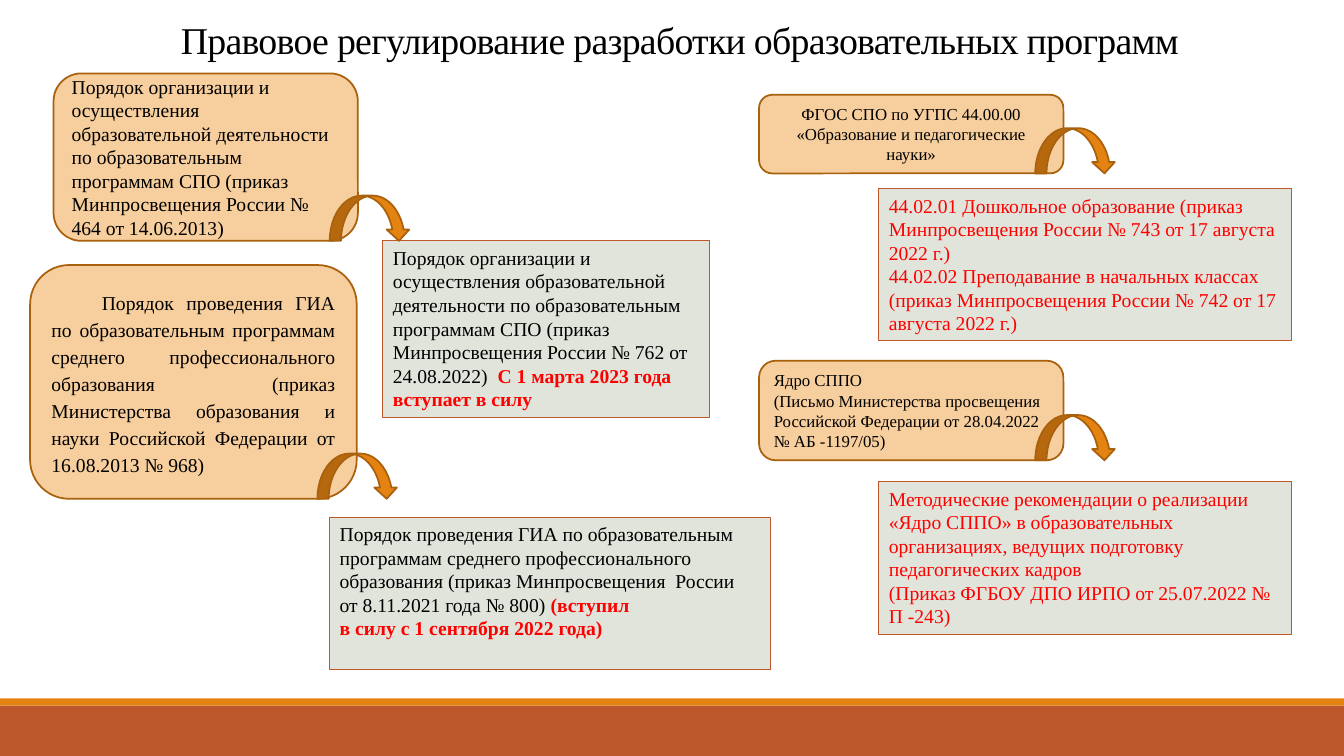
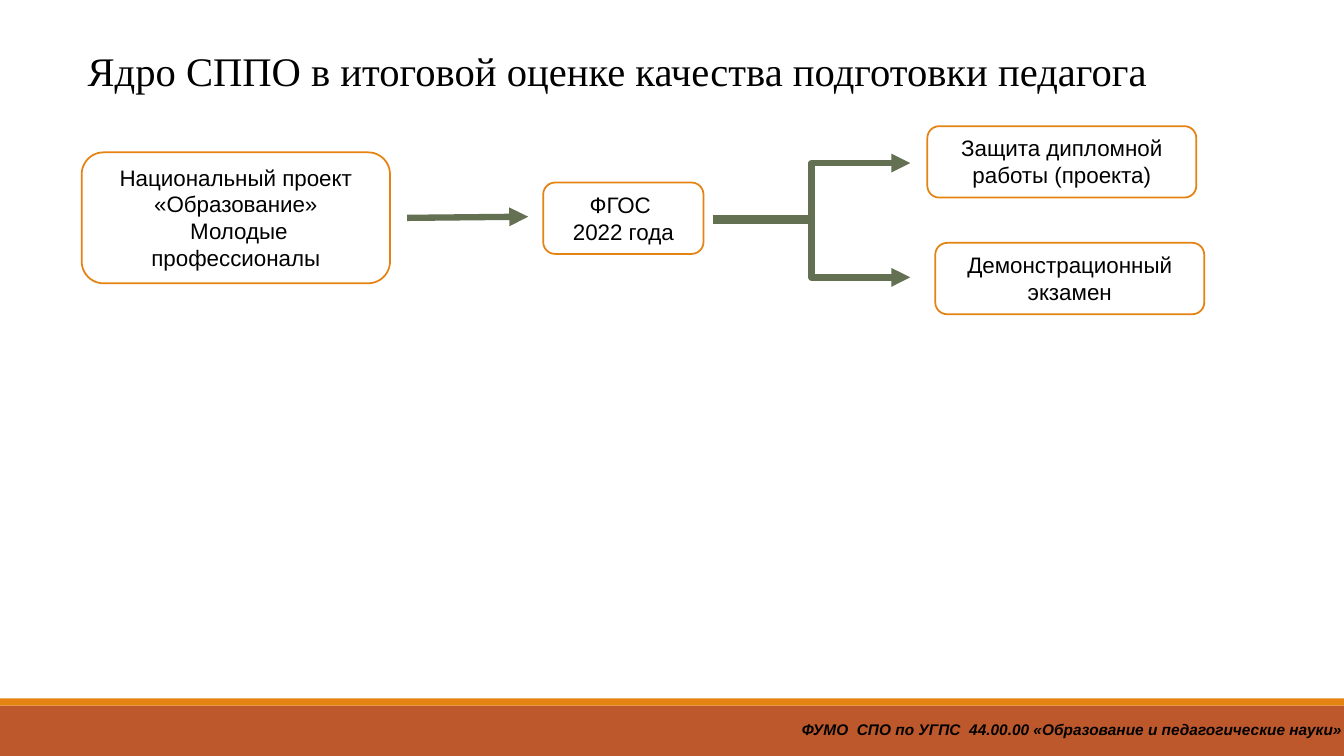
from dataclasses import dataclass

from lxml.etree import SubElement
from pptx import Presentation
from pptx.dml.color import RGBColor
from pptx.enum.shapes import MSO_CONNECTOR, MSO_SHAPE
from pptx.enum.text import MSO_ANCHOR, PP_ALIGN
from pptx.oxml.ns import qn
from pptx.util import Cm, Pt


@dataclass(frozen=True)
class Theme:
    serif: str = "Times New Roman"
    sans: str = "Arial"
    text: str = "000000"
    accent: str = "FF0000"
    white: str = "FFFFFF"
    orange: str = "E48312"
    rust: str = "BD582C"
    brown: str = "A9610D"
    peach: str = "F7CE9D"
    sage: str = "E0E4DB"
    olive: str = "637052"
    law_title_size: float = 27
    core_title_size: float = 29
    flow_size: float = 16
    body_size: float = 14
    small_size: float = 12
    footer_size: float = 11
    thin: float = 0.75
    outline: float = 1.25
    arrow: float = 4.5


THEME = Theme()
SLIDE_WIDTH, SLIDE_HEIGHT = 33.87, 19.05
BANDS = [((0, 17.78, SLIDE_WIDTH, 1.27), THEME.rust),
         ((0, 17.6, SLIDE_WIDTH, 0.18), THEME.orange)]
CURVE_WIDTH, CURVE_HEIGHT = 2.03, 1.14

LAW_TITLE = "Правовое регулирование разработки образовательных программ"
REPLACEMENTS = [
    {
        "old_box": (1.35, 1.85, 7.67, 4.22),
        "old": ["Порядок организации и осуществления образовательной деятельности по образовательным "
                "программам СПО (приказ Минпросвещения России № 464 от 14.06.2013)"],
        "new_box": (9.65, 6.07, 8.23, 4.45),
        "new": [("Порядок организации и осуществления образовательной деятельности по образовательным "
                 "программам СПО (приказ Минпросвещения России № 762 от 24.08.2022)",
                 "  С 1 марта 2023 года вступает в силу")],
    },
    {
        "old_box": (0.76, 6.68, 8.23, 5.89),
        "old": ["Порядок проведения ГИА по образовательным программам среднего профессионального "
                "образования (приказ Министерства образования и науки Российской Федерации "
                "от 16.08.2013 № 968)"],
        "old_format": {"align": PP_ALIGN.JUSTIFY, "first_indent": 1.27, "line_spacing": 1.15},
        "overlap": 0.99,
        "new_box": (8.31, 13.03, 11.1, 3.84),
        "new": [("Порядок проведения ГИА по образовательным программам среднего профессионального "
                 "образования (приказ Минпросвещения  России  от 8.11.2021 года № 800) ", "(вступил"),
                ("", "в силу с 1 сентября 2022 года)")],
    },
    {
        "old_box": (19.13, 2.39, 7.67, 1.98),
        "old": ["ФГОС СПО по УГПС 44.00.00 «Образование и педагогические науки»"],
        "old_format": {"align": PP_ALIGN.CENTER, "size": THEME.small_size},
        "new_box": (22.15, 4.75, 10.41, 3.84),
        "new": ["44.02.01 Дошкольное образование (приказ Минпросвещения России № 743 "
                "от 17 августа 2022 г.)",
                "44.02.02 Преподавание в начальных классах (приказ Минпросвещения России № 742 "
                "от 17 августа 2022 г.)"],
        "new_format": {"color": THEME.accent},
    },
    {
        "old_box": (19.13, 9.09, 7.67, 2.51),
        "old": ["Ядро СППО",
                "(Письмо Министерства просвещения Российской Федерации от 28.04.2022 № АБ -1197/05)"],
        "old_format": {"size": THEME.small_size},
        "new_box": (22.15, 12.14, 10.41, 3.84),
        "new": ["Методические рекомендации о реализации «Ядро СППО» в образовательных организациях, "
                "ведущих подготовку педагогических кадров",
                "(Приказ ФГБОУ ДПО ИРПО от 25.07.2022 № П -243)"],
        "new_format": {"color": THEME.accent},
    },
]

CORE_TITLE = "Ядро СППО в итоговой оценке качества подготовки педагога"
FLOW_BOXES = [
    ((2.06, 3.84, 7.77, 3.3), ["Национальный проект «Образование»", " Молодые профессионалы"]),
    ((13.69, 4.6, 4.04, 1.8), ["ФГОС ", "2022 года"]),
    ((23.37, 3.18, 6.78, 1.8), ["Защита дипломной работы (проекта)"]),
    ((23.57, 6.12, 6.78, 1.8), ["Демонстрационный экзамен"]),
]
FLOW_ARROWS = [
    (MSO_CONNECTOR.STRAIGHT, (10.26, 5.49, 13.31, 5.46)),
    (MSO_CONNECTOR.ELBOW, (17.96, 5.51, 22.94, 6.99)),
    (MSO_CONNECTOR.ELBOW, (17.96, 5.56, 22.94, 4.11)),
]
FOOTER = "ФУМО  СПО по УГПС  44.00.00 «Образование и педагогические науки»"


def lengths(values):
    return [Cm(value) for value in values]


def write_text(shape, paragraphs, size=THEME.body_size, font=THEME.serif, color=THEME.text,
               align=PP_ALIGN.LEFT, anchor=MSO_ANCHOR.TOP, bold=False, italic=False,
               wrap=True, line_spacing=None, first_indent=None, tracking=None):
    frame = shape.text_frame
    frame.word_wrap = wrap
    frame.vertical_anchor = anchor
    for index, content in enumerate(paragraphs):
        paragraph = frame.add_paragraph() if index else frame.paragraphs[0]
        paragraph.alignment = align
        if line_spacing:
            paragraph.line_spacing = line_spacing
        if first_indent:
            paragraph._p.get_or_add_pPr().set("indent", str(Cm(first_indent)))
        plain, emphasis = (content, "") if isinstance(content, str) else content
        for text, emphasized in ((plain, False), (emphasis, True)):
            if not text:
                continue
            run = paragraph.add_run()
            run.text = text
            run.font.name = font
            run.font.size = Pt(size)
            run.font.bold = bold or emphasized
            run.font.italic = italic
            run.font.color.rgb = RGBColor.from_string(THEME.accent if emphasized else color)
            if tracking:
                run._r.get_or_add_rPr().set("spc", str(round(tracking * 100)))


def add_text(slide, box, text, **text_format):
    write_text(slide.shapes.add_textbox(*lengths(box)), [text], **text_format)


def add_block(slide, kind, box, fill, line=None, width=THEME.outline):
    shape = slide.shapes.add_shape(kind, *lengths(box))
    shape.shadow.inherit = False
    shape.fill.solid()
    shape.fill.fore_color.rgb = RGBColor.from_string(fill)
    if line:
        shape.line.color.rgb = RGBColor.from_string(line)
        shape.line.width = Pt(width)
    else:
        shape.line.fill.background()
    return shape


def add_arrow(slide, kind, ends):
    connector = slide.shapes.add_connector(kind, *lengths(ends))
    connector.line.color.rgb = RGBColor.from_string(THEME.olive)
    connector.line.width = Pt(THEME.arrow)
    SubElement(connector.line._get_or_add_ln(), qn("a:tailEnd"), type="triangle")
    SubElement(connector._element.spPr, qn("a:effectLst"))


def add_banded_slide(presentation):
    slide = presentation.slides.add_slide(presentation.slide_layouts[6])
    for box, color in BANDS:
        add_block(slide, MSO_SHAPE.RECTANGLE, box, color)
    return slide


def add_replacement(slide, item):
    left, top, width, height = item["old_box"]
    old = add_block(slide, MSO_SHAPE.ROUNDED_RECTANGLE, item["old_box"], THEME.peach, THEME.brown)
    write_text(old, item["old"], anchor=MSO_ANCHOR.MIDDLE, **item.get("old_format", {}))
    new = add_block(slide, MSO_SHAPE.RECTANGLE, item["new_box"], THEME.sage, THEME.rust, THEME.thin)
    write_text(new, item["new"], **item.get("new_format", {}))
    curve_box = (left + width - item.get("overlap", 0.71), top + height - CURVE_HEIGHT,
                 CURVE_WIDTH, CURVE_HEIGHT)
    add_block(slide, MSO_SHAPE.CURVED_DOWN_ARROW, curve_box, THEME.orange, THEME.brown)


def build_law_slide(presentation):
    slide = add_banded_slide(presentation)
    add_text(slide, (1.35, 0.33, 31.55, 1.37), LAW_TITLE, size=THEME.law_title_size,
             align=PP_ALIGN.CENTER, anchor=MSO_ANCHOR.BOTTOM, line_spacing=0.85, tracking=-0.5)
    for item in REPLACEMENTS:
        add_replacement(slide, item)


def build_core_slide(presentation):
    slide = add_banded_slide(presentation)
    add_text(slide, (1.65, 1.04, 27.84, 1.8), CORE_TITLE, size=THEME.core_title_size,
             align=PP_ALIGN.CENTER)
    for box, paragraphs in FLOW_BOXES:
        shape = add_block(slide, MSO_SHAPE.ROUNDED_RECTANGLE, box, THEME.white, THEME.orange)
        write_text(shape, paragraphs, size=THEME.flow_size, font=THEME.sans, align=PP_ALIGN.CENTER)
    for kind, ends in FLOW_ARROWS:
        add_arrow(slide, kind, ends)
    add_text(slide, (19.96, 18.03, 14.25, 0.74), FOOTER, size=THEME.footer_size, font=THEME.sans,
             bold=True, italic=True, wrap=False)


def main():
    presentation = Presentation()
    presentation.slide_width, presentation.slide_height = lengths((SLIDE_WIDTH, SLIDE_HEIGHT))
    build_law_slide(presentation)
    build_core_slide(presentation)
    presentation.save("out.pptx")


if __name__ == "__main__":
    main()
